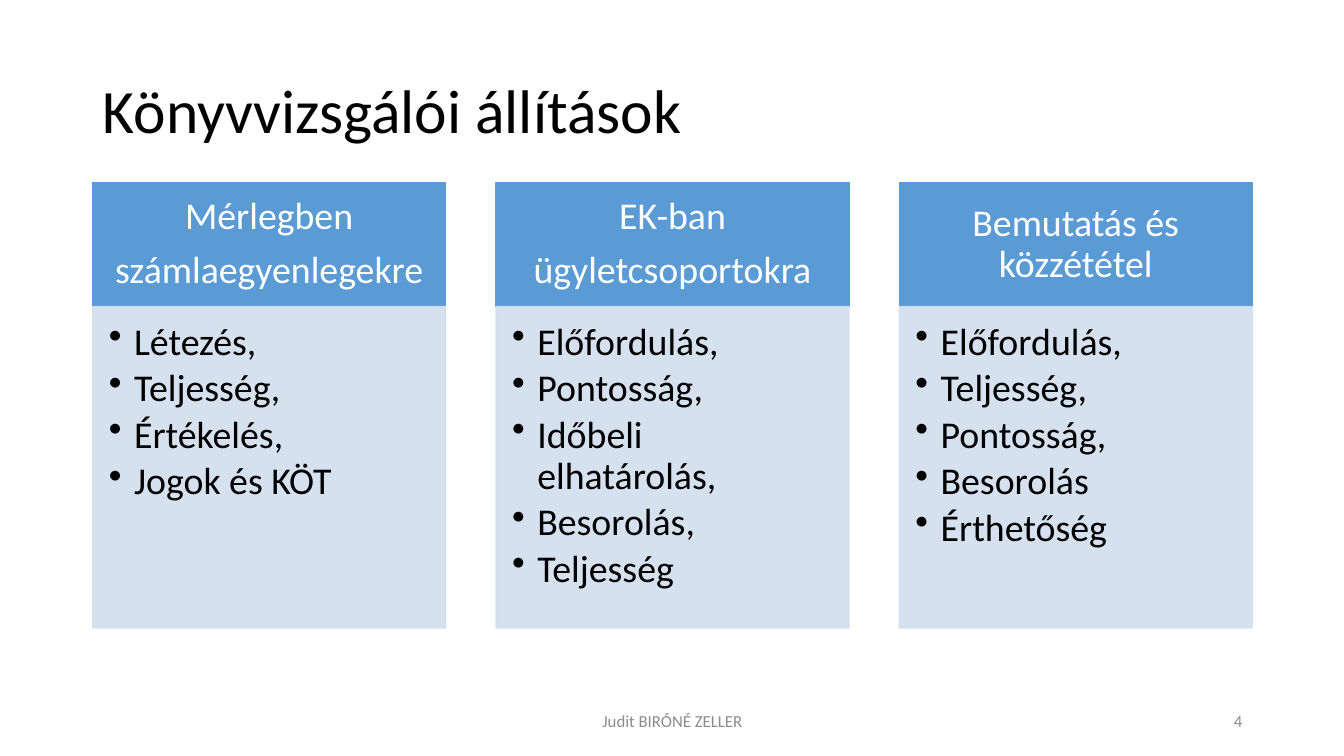
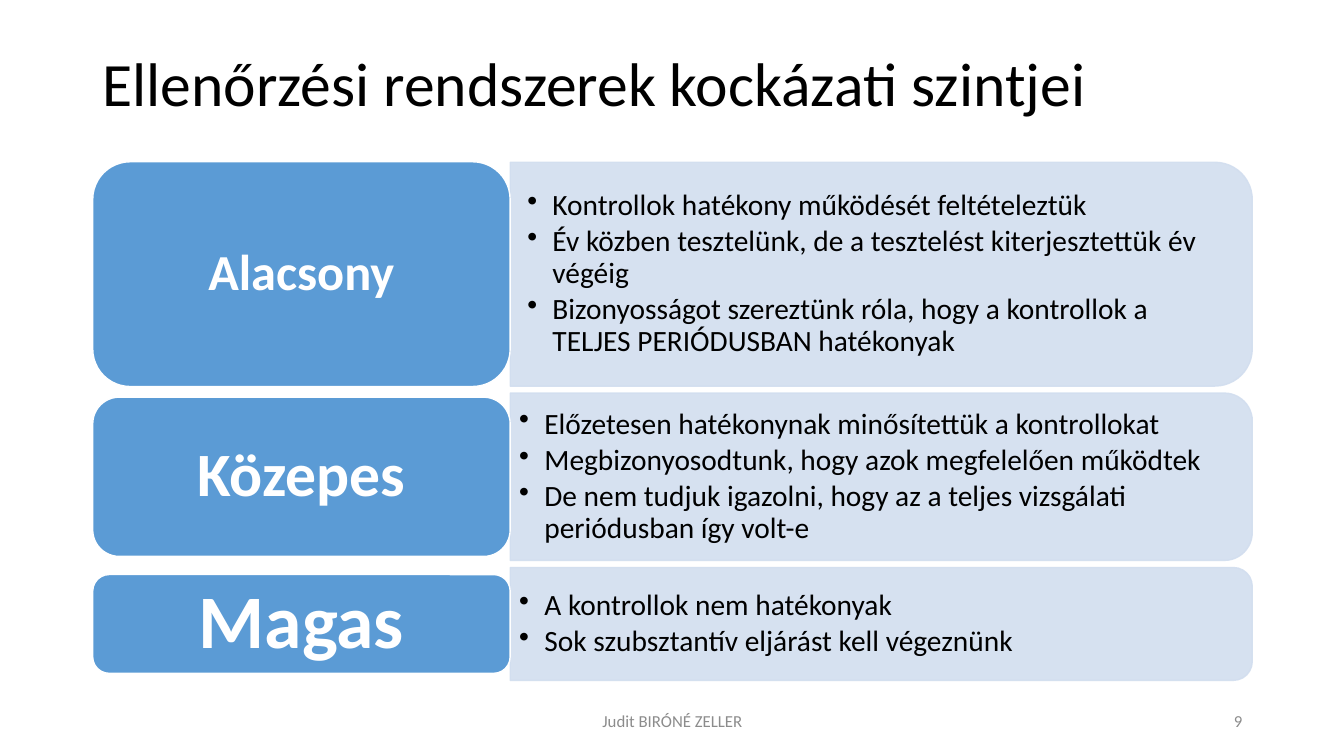
from collections import namedtuple

from lxml import etree
from pptx import Presentation
from pptx.dml.color import RGBColor
from pptx.enum.shapes import MSO_SHAPE
from pptx.enum.text import MSO_ANCHOR, PP_ALIGN
from pptx.oxml.ns import qn
from pptx.util import Inches, Pt

RECT, ROUNDED = MSO_SHAPE.RECTANGLE, MSO_SHAPE.ROUNDED_RECTANGLE
ROUND_TOP = MSO_SHAPE.ROUND_2_SAME_RECTANGLE
TOP, MIDDLE = MSO_ANCHOR.TOP, MSO_ANCHOR.MIDDLE
LEFT, CENTER, RIGHT = PP_ALIGN.LEFT, PP_ALIGN.CENTER, PP_ALIGN.RIGHT

BLUE = RGBColor(0x5B, 0x9B, 0xD5)
PALE = RGBColor(0xD2, 0xDE, 0xEF)
WHITE = RGBColor(0xFF, 0xFF, 0xFF)
BLACK = RGBColor(0x00, 0x00, 0x00)
GREY = RGBColor(0x8C, 0x8C, 0x8C)

FONT = "Calibri"
AUTHOR = "Judit BIRÓNÉ ZELLER"
PALE_ALPHA = 90
BULLET_INDENT = 0.25
ROW_GAP = 0.07
LABEL_SHARE = 0.36

Box = namedtuple("Box", "x y w h")  # inches
CONTENT = Box(0.92, 1.81, 11.5, 4.42)
LEVELS_AREA = CONTENT._replace(y=1.61, h=5.14)
FOOTER = Box(4.42, 6.95, 4.5, 0.4)
NUMBER = Box(9.42, 6.95, 3, 0.4)

TITLE_STYLE = dict(size=44, color=BLACK, spacing=0.9)
FOOTER_STYLE = dict(size=12, color=GREY)
HEADER_STYLE = dict(size=27, color=WHITE, align=CENTER, spacing=0.9, after=0.35,
                    insets=(0.21, 0.12, 0.21, 0.12))
LIST_STYLE = dict(size=27, color=BLACK, spacing=0.9, after=0.15, bullet=True,
                  anchor=TOP, insets=(0.16, 0.16, 0.21, 0.24))
LABEL_STYLE = dict(color=WHITE, bold=True, align=CENTER, spacing=0.9,
                   insets=(0.1, 0, 0.1, 0))
PANEL_STYLE = dict(size=21, color=BLACK, spacing=0.9, after=0.15, bullet=True)

ASSERTIONS = [
    (["Mérlegben", "számlaegyenlegekre"],
     ["Létezés,", "Teljesség,", "Értékelés,", "Jogok és KÖT"]),
    (["EK-ban", "ügyletcsoportokra"],
     ["Előfordulás,", "Pontosság,", "Időbeli elhatárolás,", "Besorolás,", "Teljesség"]),
    (["Bemutatás és közzététel"],
     ["Előfordulás,", "Teljesség,", "Pontosság,", "Besorolás", "Érthetőség"]),
]

Level = namedtuple("Level", "name size panel_h label_h inset points")
LEVELS = [
    Level("Alacsony", 36, 2.22, 2.23, 0.17, [
        "Kontrollok hatékony működését feltételeztük",
        "Év közben tesztelünk, de a tesztelést kiterjesztettük év végéig",
        "Bizonyosságot szereztünk róla, hogy a kontrollok a "
        "TELJES PERIÓDUSBAN hatékonyak"]),
    Level("Közepes", 44, 1.66, 1.58, 0.09, [
        "Előzetesen hatékonynak minősítettük a kontrollokat",
        "Megbizonyosodtunk, hogy azok megfelelően működtek",
        "De nem tudjuk igazolni, hogy az a teljes vizsgálati periódusban így volt-e"]),
    Level("Magas", 54, 1.12, 0.98, 0.09, [
        "A kontrollok nem hatékonyak",
        "Sok szubsztantív eljárást kell végeznünk"]),
]


def emu(box):
    return [Inches(v) for v in box]


def add_bullet(p):
    pPr = p._p.get_or_add_pPr()
    pPr.set("marL", str(Inches(BULLET_INDENT)))
    pPr.set("indent", str(-Inches(BULLET_INDENT)))
    etree.SubElement(pPr, qn("a:buChar")).set("char", "•")


def write(shape, lines, size, color, bold=False, align=LEFT, anchor=MIDDLE,
          spacing=1.0, after=0, bullet=False, insets=(0.1, 0.05, 0.1, 0.05)):
    """Fill a shape with paragraphs; after is a share of the text size."""
    tf = shape.text_frame
    tf.word_wrap = True
    tf.vertical_anchor = anchor
    for side, inset in zip(("left", "top", "right", "bottom"), insets):
        setattr(tf, f"margin_{side}", Inches(inset))
    for i, line in enumerate(lines):
        p = tf.add_paragraph() if i else tf.paragraphs[0]
        for name, value in dict(alignment=align, line_spacing=spacing,
                                space_after=Pt(size * after)).items():
            setattr(p, name, value)
        if bullet:
            add_bullet(p)
        r = p.add_run()
        r.text = line
        for name, value in dict(name=FONT, size=Pt(size), bold=bold).items():
            setattr(r.font, name, value)
        r.font.color.rgb = color


def add_text(s, box, lines, **style):
    write(s.shapes.add_textbox(*emu(box)), lines, **style)


def add_block(s, kind, box, fill, line, alpha=100):
    sp = s.shapes.add_shape(kind, *emu(box))
    sp.shadow.inherit = False
    sp.fill.solid()
    sp.fill.fore_color.rgb = fill
    sp.line.color.rgb = line
    sp.line.width = Pt(1)
    if alpha < 100:
        for clr in sp._element.spPr.iter(qn("a:srgbClr")):
            etree.SubElement(clr, qn("a:alpha")).set("val", str(alpha * 1000))
    return sp


def add_slide(prs, title, title_h, number):
    s = prs.slides.add_slide(prs.slide_layouts[6])
    add_text(s, Box(CONTENT.x, 0.4, CONTENT.w, title_h), [title], **TITLE_STYLE)
    add_text(s, FOOTER, [AUTHOR], align=CENTER, **FOOTER_STYLE)
    add_text(s, NUMBER, [str(number)], align=RIGHT, **FOOTER_STYLE)
    return s


def add_column(s, box, heading, points):
    head_h = 1.23
    head = add_block(s, RECT, box._replace(h=head_h), BLUE, BLUE)
    write(head, heading, **HEADER_STYLE)
    body_box = box._replace(y=box.y + head_h, h=box.h - head_h)
    body = add_block(s, RECT, body_box, PALE, PALE, PALE_ALPHA)
    write(body, points, **LIST_STYLE)


def add_columns(s, area, columns):
    gap = 0.5
    w = (area.w - gap * (len(columns) - 1)) / len(columns)
    for i, (heading, points) in enumerate(columns):
        add_column(s, area._replace(x=area.x + i * (w + gap), w=w), heading, points)


def add_level(s, box, level):
    """Blue label at the left, pale panel rounded at its right end."""
    label_w = box.w * LABEL_SHARE
    panel = Box(box.x + label_w, box.y, box.w - label_w, box.h)
    mid_x, mid_y = panel.x + panel.w / 2, box.y + box.h / 2
    # Turned by 90 degrees, so width and height change places.
    upright = Box(mid_x - panel.h / 2, mid_y - panel.w / 2, panel.h, panel.w)
    add_block(s, ROUND_TOP, upright, PALE, PALE, PALE_ALPHA).rotation = 90
    add_text(s, panel._replace(w=panel.w - 0.05 * panel.h), level.points,
             insets=(level.inset, 0.05, level.inset, 0.05), **PANEL_STYLE)
    label_box = Box(box.x, mid_y - level.label_h / 2, label_w, level.label_h)
    label = add_block(s, ROUNDED, label_box, BLUE, WHITE)
    write(label, [level.name], size=level.size, **LABEL_STYLE)


def add_levels(s, area, levels):
    y = area.y
    for level in levels:
        add_level(s, area._replace(y=y, h=level.panel_h), level)
        y += level.panel_h + ROW_GAP


def main():
    prs = Presentation()
    prs.slide_width, prs.slide_height = Inches(13.33), Inches(7.5)
    s = add_slide(prs, "Könyvvizsgálói állítások", 1.45, 4)
    add_columns(s, CONTENT, ASSERTIONS)
    s = add_slide(prs, "Ellenőrzési rendszerek kockázati szintjei", 0.91, 9)
    add_levels(s, LEVELS_AREA, LEVELS)
    prs.save("out.pptx")


if __name__ == "__main__":
    main()
